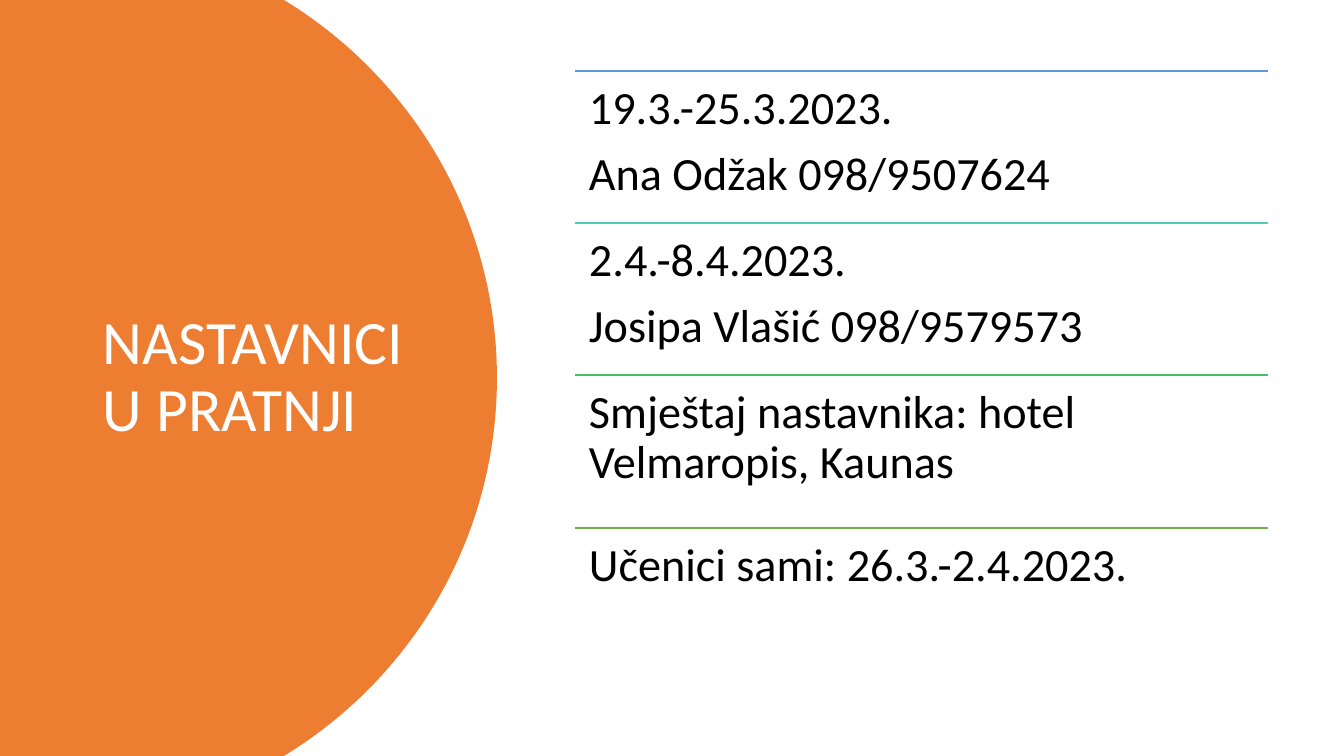
from lxml import etree
from pptx import Presentation, util as u
from pptx.dml.color import RGBColor
from pptx.enum import shapes, text
from pptx.oxml.ns import qn

PX = 12700 * 72 / 100.8  # EMU in one pixel


def px(length):
    return u.Emu(round(length * PX))


def color(hex_string):
    return RGBColor.from_string(hex_string)


presentation = Presentation()
presentation.slide_width, presentation.slide_height = px(1344), px(756)
slide = presentation.slides.add_slide(presentation.slide_layouts[6])

# Orange panel with a rounded right side
curve = [(284, 0), (412, 78), (497, 218), (497, 378)]
steps = 40
upper_arc = []
for step in range(steps + 1):
    t = step / steps
    weights = [(1 - t) ** 3, 3 * t * (1 - t) ** 2, 3 * t ** 2 * (1 - t), t ** 3]
    upper_arc.append(tuple(sum(weight * point[axis] for weight, point in zip(weights, curve))
                           for axis in (0, 1)))
lower_arc = [(x, 756 - y) for x, y in reversed(upper_arc[:-1])]
builder = slide.shapes.build_freeform(0, 0)
builder.add_line_segments([(px(x), px(y)) for x, y in upper_arc + lower_arc + [(0, 756)]])
panel = builder.convert_to_shape()
panel.shadow.inherit = False
panel.fill.solid()
panel.fill.fore_color.rgb = color("ED7D31")
panel.line.fill.background()

# Title
title = slide.shapes.add_textbox(px(93), px(71), px(325), px(614))
title.text_frame.word_wrap = True
title.text_frame.vertical_anchor = text.MSO_ANCHOR.MIDDLE
paragraph = title.text_frame.paragraphs[0]
paragraph.text = "NASTAVNICI U PRATNJI"
paragraph.line_spacing = 0.9
paragraph.font.name, paragraph.font.size = "Calibri", u.Pt(44)
paragraph.font.color.rgb = color("FFFFFF")

# Entries, each under a coloured rule
entries = [
    ("5B9BD5", ["19.3.-25.3.2023.", "Ana Odžak 098/9507624"]),
    ("52CAB8", ["2.4.-8.4.2023.", "Josipa Vlašić 098/9579573"]),
    ("49BF64", ["Smještaj nastavnika: hotel Velmaropis, Kaunas"]),
    ("70AD47", ["Učenici sami: 26.3.-2.4.2023."]),
]
left, width, height = 575, 693, 152
for index, (rule_color, lines) in enumerate(entries):
    top = 71 + index * 457 // 3
    rule = slide.shapes.add_connector(shapes.MSO_CONNECTOR.STRAIGHT,
                                      px(left), px(top), px(left + width), px(top))
    rule.line.color.rgb = color(rule_color)
    rule.line.width = u.Pt(1)
    etree.SubElement(rule._element.spPr, qn("a:effectLst"))

    entry = slide.shapes.add_textbox(px(left), px(top), px(width), px(height))
    frame = entry.text_frame
    frame.word_wrap = True
    frame.margin_left = frame.margin_right = frame.margin_top = frame.margin_bottom = px(14)
    frame.text = "\n".join(lines)
    for paragraph in frame.paragraphs:
        paragraph.line_spacing = 0.9
        paragraph.space_after = u.Pt(11.5)
        paragraph.font.name, paragraph.font.size = "Calibri", u.Pt(33)
        paragraph.font.color.rgb = color("000000")

presentation.save("out.pptx")
